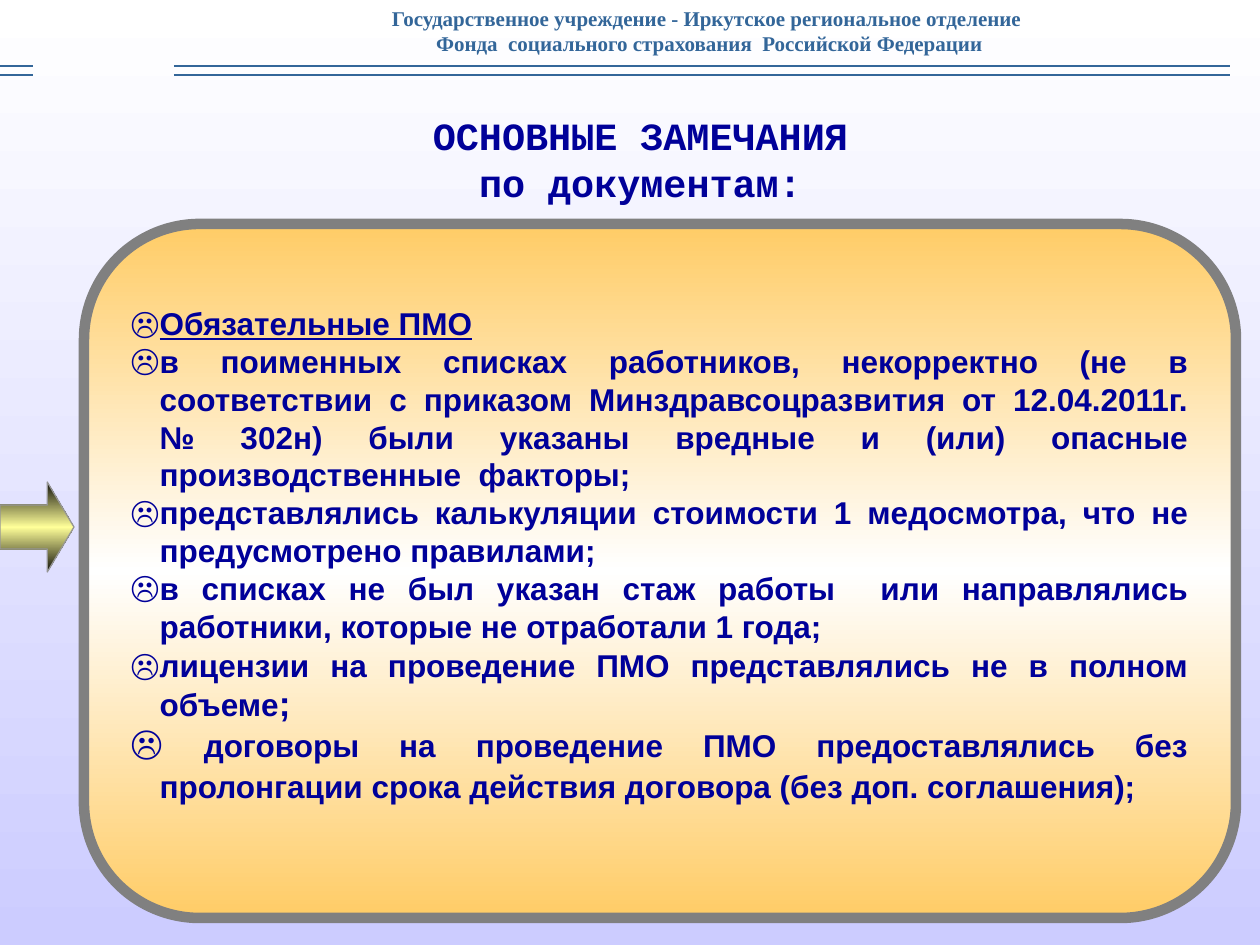
from dataclasses import dataclass

from lxml import etree
from pptx import Presentation
from pptx import util as u
from pptx.dml.color import RGBColor
from pptx.enum import shapes, text
from pptx.oxml.ns import qn

SCALE = 914400 / 126  # EMU in one px


@dataclass(frozen=True)
class Theme:
    navy: str = "000099"
    steel: str = "336699"
    gray: str = "808080"
    edge: str = "969696"
    sky: tuple = ((0, "FFFFFF"), (100, "CCCCFF"))
    sand: tuple = ((0, "FFCC66"), (50, "FFFFFF"), (100, "FFCC66"))
    gold: tuple = ((0, "10100A"), (50, "FFFF99"), (100, "10100A"))
    sans: str = "Arial"
    serif: str = "Times New Roman"
    mono: str = "Courier New"
    head: float = 12
    body: float = 18
    large: float = 20
    title: float = 22


@dataclass(frozen=True)
class Box:
    x: int
    y: int
    w: int
    h: int

    def emu(self) -> list:
        return [px(n) for n in (self.x, self.y, self.w, self.h)]


@dataclass(frozen=True)
class Style:
    font: str
    size: float
    color: str
    lead: float
    align: text.PP_ALIGN


@dataclass(frozen=True)
class Item:
    runs: tuple  # (wording, size) pairs
    lead: float = 21.6
    under: bool = False


T = Theme()
MID, JUST = text.PP_ALIGN.CENTER, text.PP_ALIGN.JUSTIFY
HEAD = Style(T.serif, T.head, T.steel, 14.3, MID)
TITLE = Style(T.mono, T.title, T.navy, 26.9, MID)
LIST = Style(T.sans, T.body, T.navy, 21.6, JUST)

ITEMS = (
    Item((("Обязательные ПМО", T.body),), under=True),
    Item((("в поименных списках работников, некорректно (не в соответствии "
           "с приказом Минздравсоцразвития от 12.04.2011г. № 302н) были указаны "
           "вредные и (или) опасные производственные  факторы;", T.body),)),
    Item((("представлялись калькуляции стоимости 1 медосмотра, что не "
           "предусмотрено правилами;", T.body),)),
    Item((("в списках не был указан стаж работы  или направлялись работники, "
           "которые не отработали 1 года;", T.body),)),
    Item((("лицензии на проведение ПМО представлялись не в полном объеме", T.body),
          (";", T.large)), lead=22.7),
    Item(((" ", T.large),
          ("договоры на проведение ПМО предоставлялись без пролонгации срока "
           "действия договора (без доп. соглашения);", T.body)), lead=23),
)


def px(n: int) -> u.Emu:
    return u.Emu(round(n * SCALE))


def rgb(code: str) -> RGBColor:
    return RGBColor.from_string(code)


def blend(fill, root, stops: tuple) -> None:
    """Vertical gradient that stays upright when its shape is turned."""
    fill.gradient()
    fill.gradient_angle = 270
    grad = next(root.iter(qn("a:gradFill")))
    grad.set("rotWithShape", "0")
    group = grad.find(qn("a:gsLst"))
    for old in list(group):
        group.remove(old)
    for pos, code in stops:
        stop = etree.SubElement(group, qn("a:gs"), pos=str(pos * 1000))
        etree.SubElement(stop, qn("a:srgbClr"), val=code)


def block(tree, kind, box: Box, stops: tuple, edge: str, width: float):
    shape = tree.add_shape(kind, *box.emu())
    shape.shadow.inherit = False
    blend(shape.fill, shape._element, stops)
    shape.line.color.rgb = rgb(edge)
    shape.line.width = u.Pt(width)
    return shape


def rule(tree, x1: int, x2: int, y: int) -> None:
    line = tree.add_connector(
        shapes.MSO_CONNECTOR.STRAIGHT, px(x1), px(y), px(x2), px(y))
    line.line.color.rgb = rgb(T.steel)
    line.line.width = u.Pt(1.5)
    etree.SubElement(line._element.spPr, qn("a:effectLst"))


def frame(shape, box: Box, anchor):
    """Place a text shape and set up its frame."""
    shape.left, shape.top, shape.width, shape.height = box.emu()
    area = shape.text_frame
    area.word_wrap = True
    area.auto_size = text.MSO_AUTO_SIZE.NONE
    area.vertical_anchor = anchor
    area.margin_left = area.margin_right = u.Inches(0.1)
    area.margin_top = area.margin_bottom = u.Inches(0.05)
    return area


def write(area, items: tuple, style: Style) -> list:
    paras = []
    for i, item in enumerate(items):
        para = area.add_paragraph() if i else area.paragraphs[0]
        para.alignment = style.align
        para.line_spacing = u.Pt(item.lead)
        para.space_before = para.space_after = u.Pt(0)
        for words, size in item.runs:
            run = para.add_run()
            run.text = words
            font = run.font
            font.name, font.size, font.bold = style.font, u.Pt(size), True
            font.underline = item.under
            font.color.rgb = rgb(style.color)
        paras.append(para)
    return paras


def lines(style: Style, *words: str) -> tuple:
    return tuple(Item(((w, style.size),), style.lead) for w in words)


def bullet(para, indent: int) -> None:
    props = para._p.get_or_add_pPr()
    props.set("marL", str(px(indent)))
    props.set("indent", str(-px(indent)))
    color = etree.SubElement(props, qn("a:buClr"))
    etree.SubElement(color, qn("a:srgbClr"), val=T.navy)
    etree.SubElement(props, qn("a:buFont"), typeface=T.sans)
    etree.SubElement(props, qn("a:buChar"), char="☹")


def main() -> None:
    deck = Presentation()
    deck.slide_width, deck.slide_height = px(1260), px(945)
    slide = deck.slides.add_slide(deck.slide_layouts[1])
    tree = slide.shapes
    title, body = tree.title, slide.placeholders[1]
    blend(slide.background.fill, slide._element, T.sky)

    # Arrow and panel
    kind = shapes.MSO_SHAPE
    arrow = block(tree, kind.DOWN_ARROW, Box(-8, 490, 90, 74), T.gold, T.edge, 0.75)
    arrow.rotation = 270
    arrow.adjustments[0], arrow.adjustments[1] = 0.49, 0.36
    block(tree, kind.ROUNDED_RECTANGLE, Box(84, 224, 1152, 694), T.sand, T.gray, 6)

    # List on the panel
    tree._spTree.append(body._element)
    area = frame(body, Box(118, 298, 1083, 540), text.MSO_ANCHOR.TOP)
    for para in write(area, ITEMS, LIST):
        bullet(para, 29)

    # Header band
    band = tree.add_group_shape().shapes
    box = Box(184, 0, 1046, 62)
    area = frame(band.add_textbox(*box.emu()), box, text.MSO_ANCHOR.MIDDLE)
    write(area, lines(
        HEAD, "Государственное учреждение - Иркутское региональное отделение",
        " Фонда  социального страхования  Российской Федерации"), HEAD)
    for x1, x2 in ((174, 1230), (0, 33)):
        for y in (66, 75):
            rule(band, x1, x2, y)

    # Title
    tree._spTree.append(title._element)
    area = frame(title, Box(95, 108, 1091, 100), text.MSO_ANCHOR.MIDDLE)
    write(area, lines(TITLE, "ОСНОВНЫЕ ЗАМЕЧАНИЯ", "по документам:"), TITLE)

    deck.save("out.pptx")


if __name__ == "__main__":
    main()
